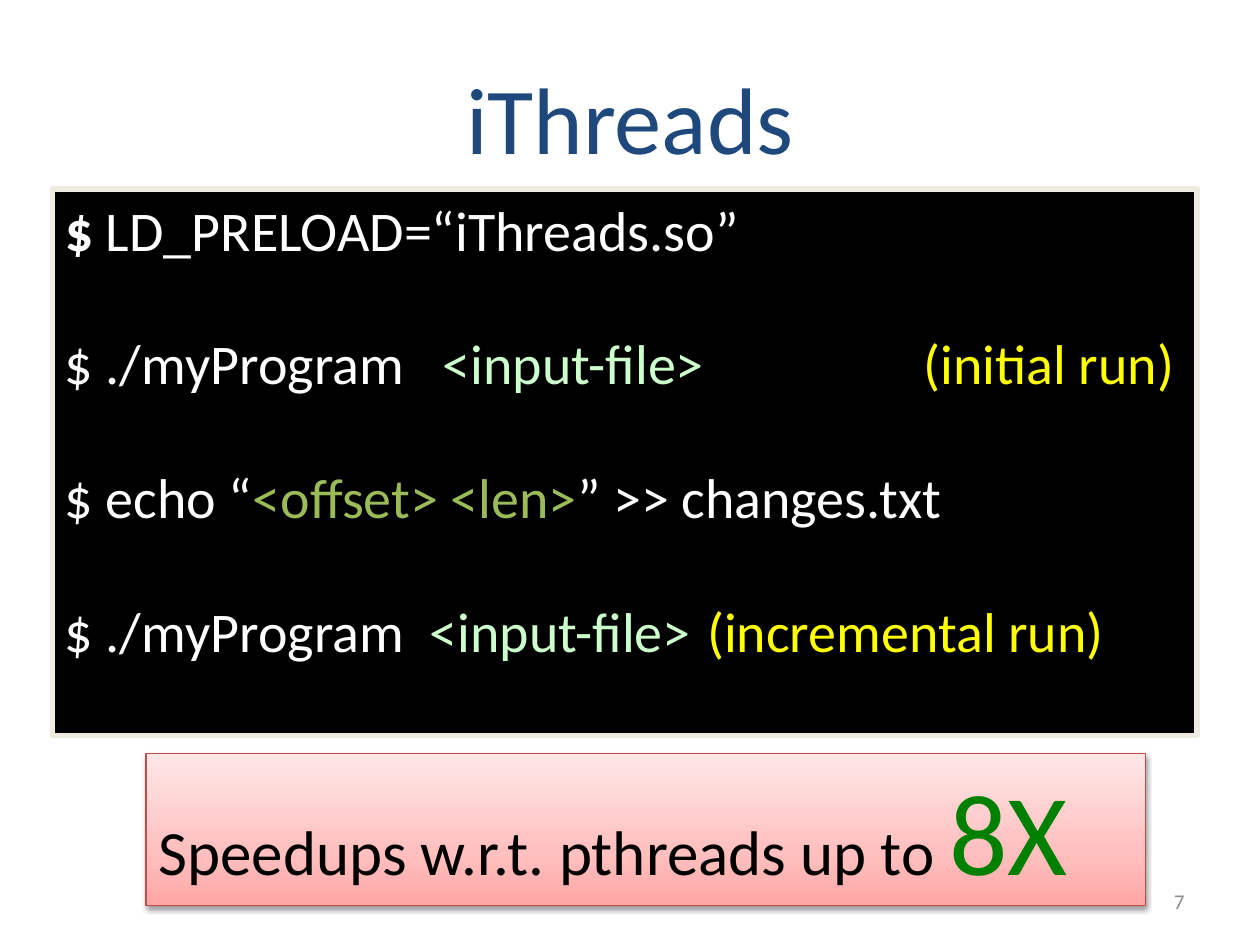
from lxml import etree
from pptx import Presentation
from pptx.dml.color import RGBColor
from pptx.enum import shapes, text
from pptx.oxml import ns
from pptx.util import Pt

FONT = "Calibri"
WHITE, MINT, OLIVE, YELLOW = "FFFFFF", "CCFFCC", "9BBB59", "FFFF00"


def rgb(code):
    return RGBColor.from_string(code)


def node(parent, tag, **attrs):
    return etree.SubElement(parent, ns.qn(tag), attrs)


def place(shape, box):
    shape.left, shape.top, shape.width, shape.height = map(Pt, box)


def write(para, size, runs):
    """Fill a paragraph from (text, colour) pairs."""
    para.font.name, para.font.size = FONT, Pt(size)
    for words, color in runs:
        run = para.add_run()
        run.text = words
        run.font.color.rgb = rgb(color)


def panel(slide, box, line, width):
    shape = slide.shapes.add_shape(shapes.MSO_SHAPE.RECTANGLE, *map(Pt, box))
    shape.shadow.inherit = False
    shape.line.color.rgb = rgb(line)
    shape.line.width = Pt(width)
    shape.text_frame.vertical_anchor = text.MSO_ANCHOR.TOP
    return shape


def title(slide, box):
    shape = slide.shapes.title
    place(shape, box)
    frame = shape.text_frame
    frame.vertical_anchor = text.MSO_ANCHOR.MIDDLE
    para = frame.paragraphs[0]
    para.alignment = text.PP_ALIGN.CENTER
    write(para, 54, [("iThreads", "1F497D")])


def console(slide, box):
    shape = panel(slide, box, "EEECE1", 3)
    shape.fill.solid()
    shape.fill.fore_color.rgb = rgb("000000")
    frame = shape.text_frame
    # Each command: its tab stops, then its coloured runs
    rows = [
        ([], [("$ ", WHITE), ("LD_PRELOAD=“iThreads.so”", WHITE)]),
        ([216, 490.5], [("$ ./myProgram\t", WHITE), ("<input-file>\t", MINT),
                        ("(initial run)", YELLOW)]),
        ([], [("$ echo “", WHITE), ("<offset> <len>", OLIVE),
              ("” >> changes.txt", WHITE)]),
        ([208.5, 367], [("$ ./myProgram\t", WHITE), ("<input-file>\t", MINT),
                        ("(incremental run)", YELLOW)]),
    ]
    for i, (stops, runs) in enumerate(rows):
        para = frame.add_paragraph() if i else frame.paragraphs[0]
        para.alignment = text.PP_ALIGN.LEFT
        para.space_before = Pt(38 if i else 0)
        if stops:
            tabs = node(para._p.get_or_add_pPr(), "a:tabLst")
            for stop in stops:
                node(tabs, "a:tab", pos=str(Pt(stop)), algn="l")
        write(para, 32, runs)
    frame.paragraphs[0].runs[0].font.bold = True


def result(slide, box):
    shape = panel(slide, box, "BF4C48", 0.75)
    # Three-stop gradient, rising from the bottom edge
    shape.fill.gradient()
    shape.fill.gradient_angle = 90
    stops = shape._element.spPr.find(".//" + ns.qn("a:gsLst"))
    stops.clear()
    for pos, color in ((0, "FFA6A5"), (35, "FFC0BF"), (100, "FFE7E7")):
        stop = node(stops, "a:gs", pos=str(pos * 1000))
        node(stop, "a:srgbClr", val=color)
    # Soft shadow below
    glow = node(shape._element.spPr.find(ns.qn("a:effectLst")), "a:outerShdw",
                blurRad=str(Pt(3.1)), dist=str(Pt(1.6)), dir="5400000",
                rotWithShape="0")
    node(node(glow, "a:srgbClr", val="000000"), "a:alpha", val="38000")
    frame = shape.text_frame
    frame.word_wrap = False
    para = frame.paragraphs[0]
    para.alignment = text.PP_ALIGN.LEFT
    write(para, 36, [("Speedups w.r.t. pthreads up to ", "000000"),
                     ("8X", "008000")])
    para.runs[1].font.size = Pt(66)


def number(slide, box):
    frame = slide.shapes.add_textbox(*map(Pt, box)).text_frame
    frame.word_wrap = True
    frame.vertical_anchor = text.MSO_ANCHOR.MIDDLE
    para = frame.paragraphs[0]
    para.alignment = text.PP_ALIGN.RIGHT
    write(para, 12, [("7", "8C8C8C")])


def main():
    deck = Presentation()
    deck.slide_width, deck.slide_height = Pt(720), Pt(540)
    slide = deck.slides.add_slide(deck.slide_layouts[5])
    title(slide, (36, 21.6, 648, 90))
    console(slide, (30, 108, 654, 312.5))
    number(slide, (516, 500.5, 168, 28.75))
    result(slide, (83.5, 430.5, 571, 87))
    deck.save("out.pptx")


if __name__ == "__main__":
    main()
